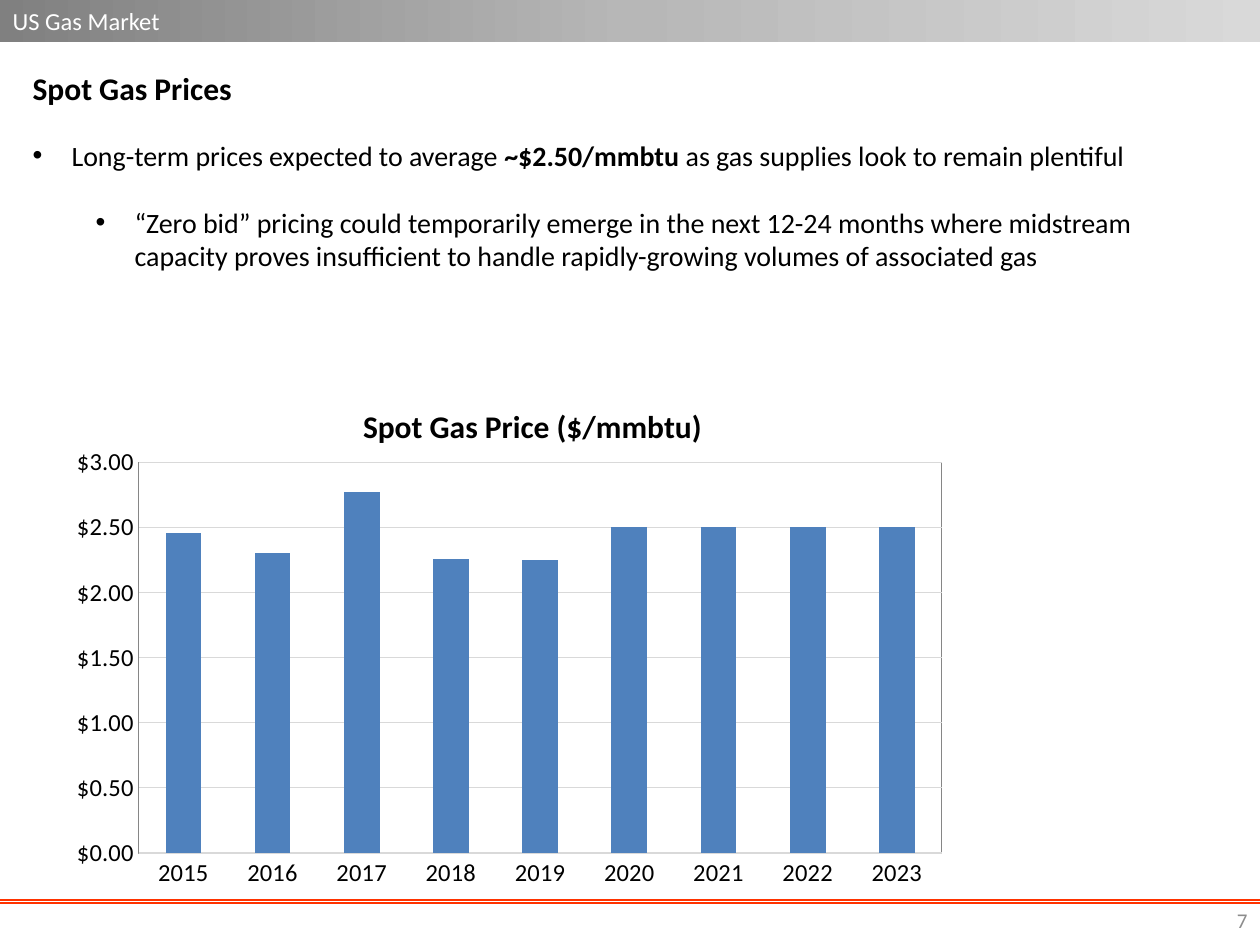
import copy

import pptx
import pptx.chart.data
import pptx.dml.color
import pptx.enum.chart
import pptx.enum.shapes
import pptx.enum.text
import pptx.oxml
import pptx.oxml.ns
import pptx.util
from lxml import etree

SCALE = 914400 / 126
FACE = "Calibri"
PRICES = {
    "2015": 2.46, "2016": 2.3, "2017": 2.77, "2018": 2.26, "2019": 2.25,
    "2020": 2.5, "2021": 2.5, "2022": 2.5, "2023": 2.5,
}
qn = pptx.oxml.ns.qn
LEFT = pptx.enum.text.PP_ALIGN.LEFT
RIGHT = pptx.enum.text.PP_ALIGN.RIGHT
MIDDLE = pptx.enum.text.MSO_ANCHOR.MIDDLE
TOP = pptx.enum.text.MSO_ANCHOR.TOP


def px(num):
    return pptx.util.Emu(round(num * SCALE))


def rgb(code):
    return pptx.dml.color.RGBColor.from_string(code)


def style(font, size, color="000000", bold=False):
    font.name = FACE
    font.size = pptx.util.Pt(size)
    font.bold = bold
    font.color.rgb = rgb(color)


def rule(line, color):
    line.color.rgb = rgb(color)
    line.width = pptx.util.Pt(0.75)


def move(shape, left, top, width, height):
    shape.left, shape.top = px(left), px(top)
    shape.width, shape.height = px(width), px(height)


def setup(frame, anchor):
    frame.word_wrap = True
    frame.auto_size = pptx.enum.text.MSO_AUTO_SIZE.NONE
    frame.vertical_anchor = anchor


def fill_bar(bar):
    """Format the title placeholder as the grey gradient header."""
    move(bar, 0, 0, 1260, 42)
    bar.fill.gradient()
    bar.fill.gradient_angle = 0
    stops = bar._element.spPr.find(".//" + qn("a:gsLst"))
    stops.insert(1, copy.deepcopy(stops[0]))
    shades = [(0, "808080"), (0.5, "B7B7B7"), (1, "D9D9D9")]
    for stop, (pos, color) in zip(bar.fill.gradient_stops, shades):
        stop.position = pos
        stop.color.rgb = rgb(color)
    setup(bar.text_frame, MIDDLE)
    para = bar.text_frame.paragraphs[0]
    para.text = "US Gas Market"
    para.alignment = LEFT
    style(para.font, 14, "FFFFFF")


def set_bullet(para, left, hang, mark=None):
    props = para._p.get_or_add_pPr()
    props.set("marL", str(px(left)))
    props.set("indent", str(-px(hang)))
    if mark:
        etree.SubElement(props, qn("a:buFont"), typeface="Arial")
        etree.SubElement(props, qn("a:buChar"), char=mark)
    else:
        etree.SubElement(props, qn("a:buNone"))


def fill_body(body):
    move(body, 20, 63, 1198, 252)
    frame = body.text_frame
    setup(frame, TOP)

    head = frame.paragraphs[0]
    head.text = "Spot Gas Prices"
    set_bullet(head, 0, 0)
    head.space_before = pptx.util.Pt(0)
    style(head.font, 18, bold=True)

    items = [
        (0, 39, 18, ["Long-term prices expected to average ", "~$2.50/mmbtu ",
                     "as gas supplies look to remain plentiful"]),
        (1, 102, 19, ["“Zero bid” pricing could temporarily emerge in the next "
                      "12-24 months where midstream capacity proves insufficient "
                      "to handle rapidly-growing volumes of associated gas"]),
    ]
    for level, left, gap, parts in items:
        para = frame.add_paragraph()
        para.level = level
        set_bullet(para, left, 39, "•")
        para.space_before = pptx.util.Pt(gap)
        style(para.font, 16)
        for part in parts:
            run = para.add_run()
            run.text = part
            if part.startswith("~"):
                run.font.bold = True


def add_rule(slide, top):
    line = slide.shapes.add_connector(
        pptx.enum.shapes.MSO_CONNECTOR.STRAIGHT, px(0), px(top), px(1260), px(top))
    rule(line.line, "FF3300")
    etree.SubElement(line._element.spPr, qn("a:effectLst"))


def set_layout(parent, index, **values):
    """Place a chart part by hand, as fractions of the chart."""
    layout = parent.find(qn("c:layout"))
    if layout is None:
        layout = etree.Element(qn("c:layout"))
        parent.insert(index, layout)
    manual = etree.SubElement(layout, qn("c:manualLayout"))
    for name, val in values.items():
        etree.SubElement(manual, qn("c:" + name), val=str(val))


def add_chart(slide):
    data = pptx.chart.data.CategoryChartData()
    data.categories = list(PRICES)
    data.add_series("Series 1", list(PRICES.values()))
    chart = slide.shapes.add_chart(
        pptx.enum.chart.XL_CHART_TYPE.COLUMN_CLUSTERED,
        *map(px, (63, 399, 892, 499)), data).chart
    style(chart.font, 10, bold=True)
    chart.has_legend = False

    chart.has_title = True
    para = chart.chart_title.text_frame.paragraphs[0]
    para.text = "Spot Gas Price ($/mmbtu)"
    style(para.font, 18, bold=True)
    set_layout(chart.chart_title._element, 1,
               xMode="edge", yMode="edge", x=0.33, y=0)

    plot = chart.plots[0]
    plot.gap_width = 150
    plot.vary_by_categories = False
    bars = plot.series[0].format.fill
    bars.solid()
    bars.fore_color.rgb = rgb("4F81BD")

    for axis in (chart.category_axis, chart.value_axis):
        axis.major_tick_mark = pptx.enum.chart.XL_TICK_MARK.NONE
        axis.minor_tick_mark = pptx.enum.chart.XL_TICK_MARK.NONE
        style(axis.tick_labels.font, 14)
    rule(chart.category_axis.format.line, "D9D9D9")
    scale = chart.value_axis
    scale.minimum_scale, scale.maximum_scale, scale.major_unit = 0, 3, 0.5
    scale.format.line.fill.background()
    scale.has_major_gridlines = True
    rule(scale.major_gridlines.format.line, "D9D9D9")
    scale.tick_labels.number_format = '"$"#,##0.00'
    scale.tick_labels.number_format_is_linked = False

    area = chart._chartSpace.chart.plotArea
    set_layout(area, 0, layoutTarget="inner", xMode="edge", yMode="edge",
               x=0.085, y=0.127, w=0.9, h=0.783)
    area.append(pptx.oxml.parse_xml(
        f'<c:spPr {pptx.oxml.ns.nsdecls("c", "a")}><a:noFill/><a:ln w="9525">'
        '<a:solidFill><a:srgbClr val="868686"/></a:solidFill></a:ln></c:spPr>'))


def add_number(slide):
    box = slide.shapes.add_textbox(*map(px, (966, 895, 294, 50)))
    setup(box.text_frame, MIDDLE)
    para = box.text_frame.paragraphs[0]
    para.text = "7"
    para.alignment = RIGHT
    style(para.font, 12, "8C8C8C")


def main():
    deck = pptx.Presentation()
    deck.slide_width, deck.slide_height = px(1260), px(945)
    slide = deck.slides.add_slide(deck.slide_layouts[1])
    add_number(slide)
    fill_body(slide.placeholders[1])
    fill_bar(slide.shapes.title)
    for top in (903, 900):
        add_rule(slide, top)
    add_chart(slide)
    deck.save("out.pptx")


if __name__ == "__main__":
    main()
